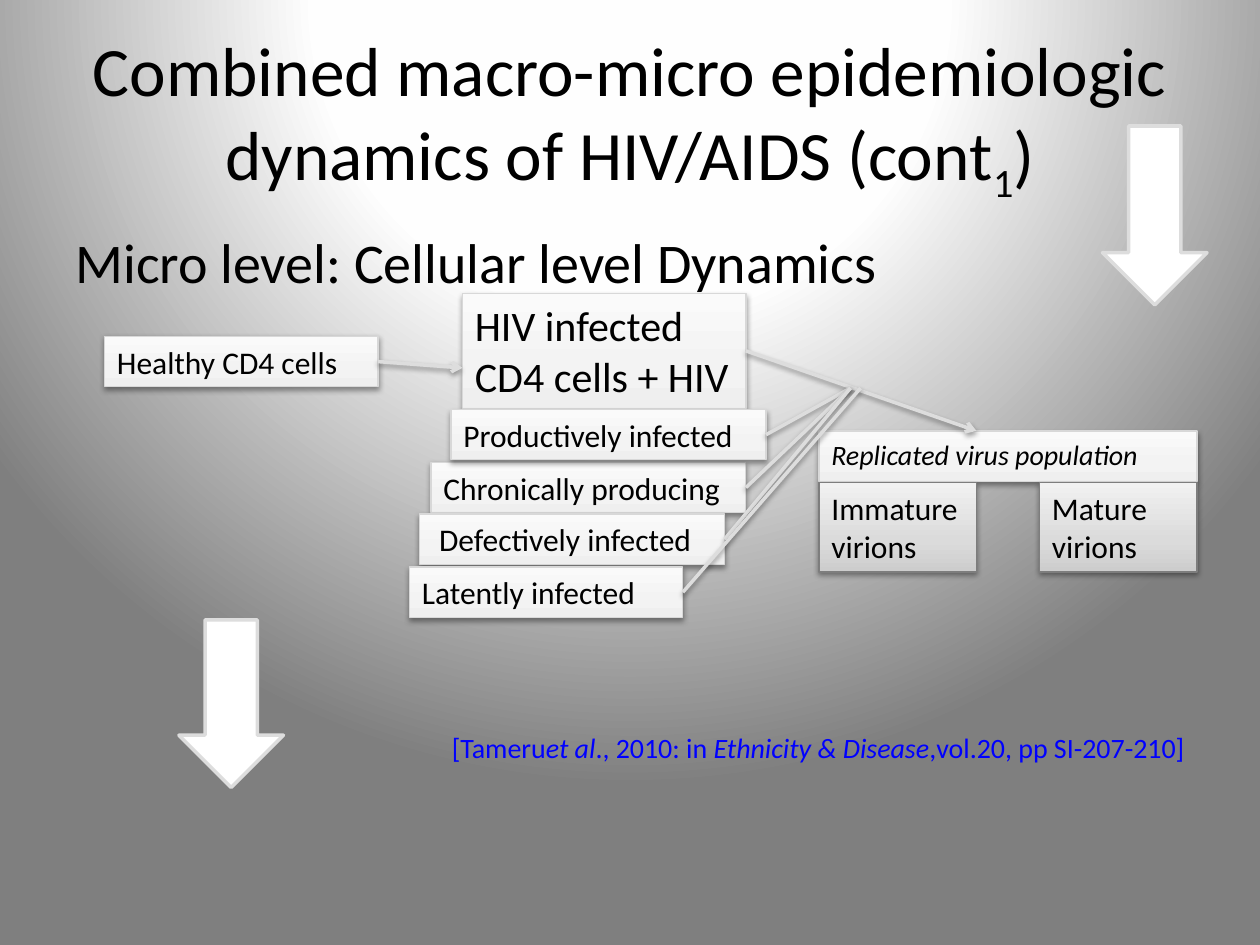
"""Build the slide on cellular level dynamics of HIV/AIDS."""
from lxml.etree import SubElement
from pptx import Presentation
from pptx.dml.color import RGBColor
from pptx.enum.shapes import MSO_CONNECTOR, MSO_SHAPE
from pptx.enum.text import MSO_ANCHOR, PP_ALIGN
from pptx.oxml import parse_xml
from pptx.oxml.ns import nsdecls, qn
from pptx.util import Inches, Pt


def gradient(properties, stops, direction):
    """Replace the solid fill in properties by a gradient."""
    colours = "".join(
        f'<a:gs pos="{place * 1000}"><a:srgbClr val="{colour}"/></a:gs>'
        for place, colour in stops)
    properties.replace(properties.find(qn("a:solidFill")), parse_xml(
        f'<a:gradFill {nsdecls("a")} rotWithShape="1"><a:gsLst>{colours}</a:gsLst>{direction}</a:gradFill>'))


def write(frame, pieces, size, colour="000000", align=PP_ALIGN.LEFT, anchor=MSO_ANCHOR.TOP):
    """Fill a text frame with one paragraph of (text, style) pieces."""
    frame.word_wrap = True
    frame.vertical_anchor = anchor
    paragraph = frame.paragraphs[0]
    paragraph.alignment = align
    for text, style in pieces:
        run = paragraph.add_run()
        run.text = text
        run.font.name = "Calibri"
        run.font.size = Pt(size)
        run.font.color.rgb = RGBColor.from_string(colour)
        run.font.italic = style == "italic"
        if style == "subscript":
            run.font._element.set("baseline", "-25000")


deck = Presentation()
deck.slide_width, deck.slide_height = Inches(10), Inches(7.5)
slide = deck.slides.add_slide(deck.slide_layouts[6])
slide.background.fill.solid()
gradient(slide.element.cSld.bg.bgPr, [(0, "FFFFFF"), (40, "FEFEFE"), (100, "7F7F7F")],
         '<a:path path="circle"><a:fillToRect l="50000" t="-80000" r="50000" b="180000"/></a:path>')

title = [("Combined macro-micro epidemiologic dynamics of HIV/AIDS (cont", ""),
         ("1", "subscript"), (")", "")]
citation = [("[Tameru", ""), ("et al", "italic"), ("., 2010: in ", ""),
            ("Ethnicity & Disease", "italic"), (",vol.20, pp SI-207-210]", "")]
texts = [
    (0.3, 1.25, title, 39.6, "000000", PP_ALIGN.CENTER),
    (1.72, 0.7, [("Micro level: Cellular level Dynamics", "")], 32, "000000", PP_ALIGN.LEFT),
    (5.75, 0.37, citation, 16, "0000FF", PP_ALIGN.RIGHT),
]
for top, height, pieces, size, colour, align in texts:
    box = slide.shapes.add_textbox(Inches(0.5), Inches(top), Inches(9), Inches(height))
    write(box.text_frame, pieces, size, colour, align, MSO_ANCHOR.MIDDLE)

pale = [(0, "EFEFEF"), (35, "F3F3F3"), (100, "FAFAFA")], "D8D8D8"
grey = [(0, "CDCDCD"), (35, "DBDBDB"), (100, "F1F1F1")], "7D7D7D"
stages = [
    ("Healthy CD4 cells", 0.83, 2.67, 2.17, 0.4, 18, pale),
    ("HIV infected CD4 cells + HIV", 3.67, 2.33, 2.25, 0.91, 24, pale),
    ("Chronically producing", 3.42, 3.67, 2.5, 0.4, 18, pale),
    ("Productively infected", 3.58, 3.25, 2.5, 0.4, 18, pale),
    (" Defectively infected", 3.33, 4.08, 2.42, 0.4, 18, pale),
    ("Latently infected", 3.25, 4.5, 2.17, 0.4, 18, pale),
    ("Replicated virus population", 6.5, 3.42, 3, 0.4, 16, pale),
    ("Immature virions", 6.5, 3.83, 1.25, 0.71, 18, grey),
    ("Mature virions", 8.25, 3.83, 1.25, 0.71, 18, grey),
]
cells = {}
for name, left, top, width, height, size, (stops, outline) in stages:
    cell = slide.shapes.add_shape(
        MSO_SHAPE.RECTANGLE, Inches(left), Inches(top), Inches(width), Inches(height))
    cell.fill.solid()
    gradient(cell.element.spPr, stops, '<a:lin ang="16200000" scaled="0"/>')
    cell.line.color.rgb = RGBColor.from_string(outline)
    cell.line.width = Pt(0.75)
    write(cell.text_frame, [(name, "italic" if size == 16 else "")], size)
    cell.shadow.inherit = False
    cells[name.strip()] = cell

flows = [
    ("Healthy CD4 cells", 3.67, 2.92, True),
    ("HIV infected CD4 cells + HIV", 7.75, 3.42, True),
    ("Productively infected", 6.75, 3.08, False),
    ("Chronically producing", 6.75, 3.08, False),
    ("Defectively infected", 6.75, 3.08, False),
    ("Latently infected", 6.83, 3.08, False),
]
links = []
for source, end_x, end_y, arrowhead in flows:
    link = slide.shapes.add_connector(
        MSO_CONNECTOR.STRAIGHT, Inches(0), Inches(0), Inches(end_x), Inches(end_y))
    link.begin_connect(cells[source], 3)
    link.line.color.rgb = RGBColor.from_string("DDDDDD")
    link.line.width = Pt(2)
    if arrowhead:
        SubElement(link.line._get_or_add_ln(), qn("a:tailEnd"), type="arrow")
    SubElement(link.element.spPr, qn("a:effectLst"))
    links.append(link)

for shaded in [*cells.values(), *links]:
    shaded.element.spPr.find(qn("a:effectLst")).append(parse_xml(
        f'<a:outerShdw {nsdecls("a")} blurRad="40000" dist="20000" dir="5400000" rotWithShape="0">'
        '<a:srgbClr val="000000"><a:alpha val="38000"/></a:srgbClr></a:outerShdw>'))

for left, top, height in [(1.42, 4.92, 1.33), (8.75, 1, 1.42)]:
    level_arrow = slide.shapes.add_shape(
        MSO_SHAPE.DOWN_ARROW, Inches(left), Inches(top), Inches(0.83), Inches(height))
    level_arrow.fill.solid()
    level_arrow.fill.fore_color.rgb = RGBColor.from_string("FFFFFF")
    level_arrow.line.color.rgb = RGBColor.from_string("DDDDDD")
    level_arrow.line.width = Pt(2)
    level_arrow.shadow.inherit = False

deck.save("out.pptx")
